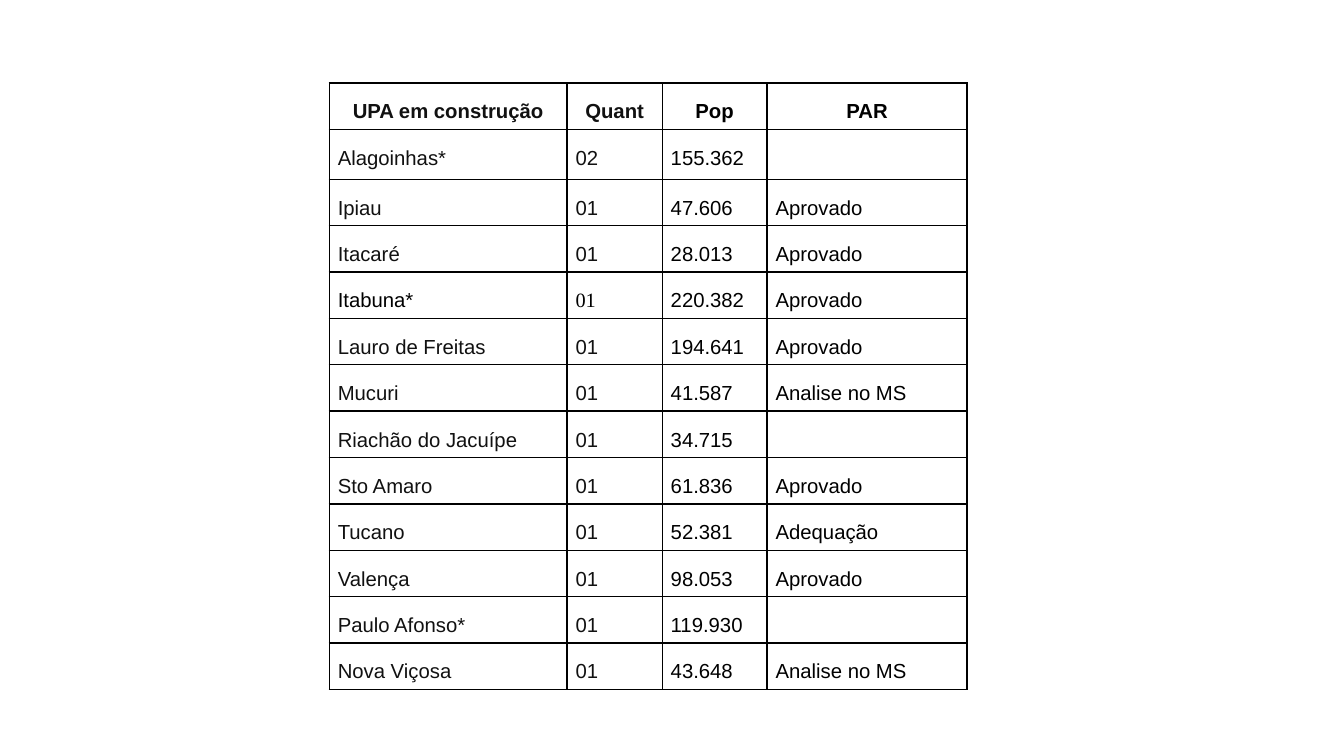
"""Build a slide with the table of UPA units under construction."""
from dataclasses import dataclass

from lxml import etree
from pptx import Presentation
from pptx import util as u
from pptx.dml.color import RGBColor
from pptx.enum import text
from pptx.oxml import ns

BLACK = RGBColor(0x00, 0x00, 0x00)
CHARCOAL = RGBColor(0x11, 0x11, 0x11)
COLUMN_WIDTHS = (1.95, 0.78, 0.86, 1.64)
ROW_HEIGHT = 0.37
FIRST_CITY_HEIGHT = 0.41
HEADINGS = ("UPA em construção", "Quant", "Pop", "PAR")


@dataclass(frozen=True)
class City:
    name: str
    population: str
    status: str = ""
    quantity: str = "01"
    color: RGBColor = CHARCOAL
    quantity_font: str = "Arial"


CITIES = (
    City("Alagoinhas*", "155.362", quantity="02"),
    City("Ipiau", "47.606", "Aprovado"),
    City("Itacaré", "28.013", "Aprovado"),
    City("Itabuna*", "220.382", "Aprovado", color=BLACK, quantity_font="Times New Roman"),
    City("Lauro de Freitas", "194.641", "Aprovado"),
    City("Mucuri", "41.587", "Analise no MS"),
    City("Riachão do Jacuípe", "34.715"),
    City("Sto Amaro", "61.836", "Aprovado"),
    City("Tucano", "52.381", "Adequação"),
    City("Valença", "98.053", "Aprovado"),
    City("Paulo Afonso*", "119.930"),
    City("Nova Viçosa", "43.648", "Analise no MS"),
)


def write(cell, words: str, *, color: RGBColor = BLACK, font: str = "Arial",
          bold: bool = False, align=text.PP_ALIGN.JUSTIFY) -> None:
    """Write one formatted paragraph in a cell."""
    para = cell.text_frame.paragraphs[0]
    if not words:
        etree.SubElement(para._p, ns.qn("a:endParaRPr"), sz="1200")
        return
    para.alignment = align
    para.line_spacing = 1.5
    para.space_after = u.Pt(14.1)
    span = para.add_run()
    span.text = words
    span.font.name = font
    span.font.size = u.Pt(12)
    span.font.bold = bold
    span.font.color.rgb = color


def frame(cell) -> None:
    """Set the margins, borders and empty fill of a cell."""
    cell.margin_left = cell.margin_right = u.Inches(0.07)
    cell.margin_top = cell.margin_bottom = u.Inches(0.05)
    properties = cell._tc.get_or_add_tcPr()
    for side in ("a:lnL", "a:lnR", "a:lnT", "a:lnB"):
        line = etree.SubElement(properties, ns.qn(side), w=str(u.Pt(0.96)))
        fill = etree.SubElement(line, ns.qn("a:solidFill"))
        etree.SubElement(fill, ns.qn("a:srgbClr"), val=str(BLACK))
    cell.fill.background()


def add_city_table(page) -> None:
    """Add the table with its headings and one row per city."""
    table = page.shapes.add_table(
        len(CITIES) + 1, len(HEADINGS), u.Inches(2.7), u.Inches(0.68),
        u.Inches(sum(COLUMN_WIDTHS)), u.Inches(4.87)).table
    table.first_row = table.horz_banding = False
    for column, width in zip(table.columns, COLUMN_WIDTHS):
        column.width = u.Inches(width)
    for row in table.rows:
        row.height = u.Inches(ROW_HEIGHT)
    table.rows[1].height = u.Inches(FIRST_CITY_HEIGHT)
    for cell in table.iter_cells():
        frame(cell)
    for index, heading in enumerate(HEADINGS):
        write(table.cell(0, index), heading, color=CHARCOAL if index < 2 else BLACK,
              bold=True, align=text.PP_ALIGN.CENTER)
    for index, city in enumerate(CITIES, start=1):
        name, quantity, population, status = table.rows[index].cells
        write(name, city.name, color=city.color)
        write(quantity, city.quantity, color=city.color, font=city.quantity_font)
        write(population, city.population)
        write(status, city.status)


def main() -> None:
    """Create and save the deck."""
    deck = Presentation()
    deck.slide_width = u.Inches(11.02)
    deck.slide_height = u.Inches(6.2)
    page = deck.slides.add_slide(deck.slide_layouts[6])
    add_city_table(page)
    deck.save("out.pptx")


if __name__ == "__main__":
    main()
